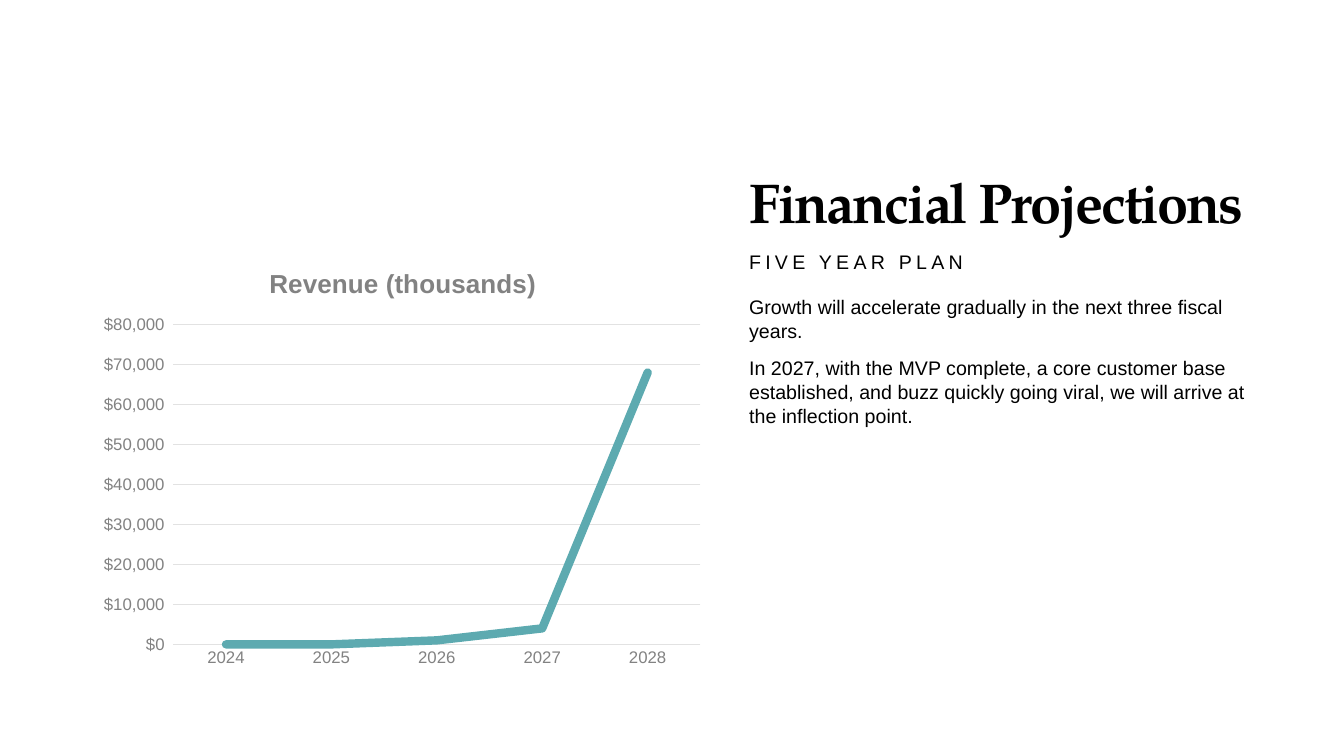
"""Build the revenue plan slide with its line chart and text."""
from dataclasses import dataclass, field
from typing import Any

from lxml.etree import SubElement
from pptx import Presentation
from pptx.chart.data import CategoryChartData
from pptx.dml.color import RGBColor
from pptx.enum.chart import XL_CHART_TYPE, XL_TICK_MARK
from pptx.enum.text import MSO_ANCHOR
from pptx.oxml import parse_xml
from pptx.oxml.ns import nsdecls, qn
from pptx.util import Inches, Pt

WIDE, HIGH = Inches(13.33), Inches(7.5)


@dataclass(frozen=True)
class Theme:
    ink: str = "000000"
    base: str = "3F3F3F"
    grey: str = "828282"
    rule: str = "E2E2E2"
    teal: str = "5DAAB0"
    serif: str = "TeX Gyre Pagella"
    sans: str = "Arial"
    head: float = 40
    body: float = 14
    title: float = 18.6
    label: float = 12
    small: float = 10


@dataclass(frozen=True)
class Area:
    """Place on the slide in percent of its width and height."""
    left: float
    top: float
    width: float
    height: float

    def frame(self) -> tuple[int, ...]:
        shares = (self.left, self.top, self.width, self.height)
        return tuple(round(share * full / 100)
                     for share, full in zip(shares, (WIDE, HIGH) * 2))


@dataclass(frozen=True)
class Note:
    area: Area
    lines: tuple[str, ...]
    font: dict[str, Any]
    track: int = 0
    frame: dict[str, Any] = field(default_factory=dict)
    format: dict[str, Any] = field(default_factory=dict)


THEME = Theme()
LEFT, RIGHT = 6.9, 55.74
SPAN = 39.08
CHART = Area(LEFT, 32.8, 46.14, 56.4)
YEARS = ("2024", "2025", "2026", "2027", "2028")
SALES = (0, 0, 1000, 4000, 68000)
NAME = "Revenue (thousands)"
MONEY = '"$"#,##0_);[Red]\\("$"#,##0\\)'
SANS = {"name": THEME.sans, "size": Pt(THEME.body)}
NOTES = (
    Note(Area(RIGHT, 12.27, SPAN, 19.6), ("Financial Projections",),
         {"name": THEME.serif, "size": Pt(THEME.head), "bold": True}, -150,
         {"vertical_anchor": MSO_ANCHOR.BOTTOM}, {"line_spacing": 0.9}),
    Note(Area(RIGHT, 38.4, SPAN, 50.8),
         ("Growth will accelerate gradually in the next three fiscal years.",
          "In 2027, with the MVP complete, a core customer base established, "
          "and buzz quickly going viral, we will arrive at the inflection "
          "point."), SANS),
    Note(Area(RIGHT, 32.8, SPAN, 4.67), ("FIVE YEAR PLAN",), SANS, 300,
         format={"line_spacing": 0.9}),
)


def apply(target: Any, values: dict[str, Any]) -> None:
    for name, value in values.items():
        setattr(target, name, value)


def style(font: Any, values: dict[str, Any], tint: str) -> None:
    apply(font, values)
    font.color.rgb = RGBColor.from_string(tint)


def stroke(line: Any, tint: str, width: float) -> None:
    line.color.rgb = RGBColor.from_string(tint)
    line.width = Pt(width)


def add_note(slide: Any, note: Note) -> None:
    frame = slide.shapes.add_textbox(*note.area.frame()).text_frame
    apply(frame, {"word_wrap": True, "margin_left": 0, **note.frame})
    for index, line in enumerate(note.lines):
        para = frame.add_paragraph() if index else frame.paragraphs[0]
        apply(para, note.format)
        if index:
            para.space_before = Pt(10)
        run = para.add_run()
        run.text = line
        style(run.font, note.font, THEME.ink)
        if note.track:
            run._r.get_or_add_rPr().set("spc", str(note.track))


def pin_plot(chart: Any, shares: dict[str, float]) -> None:
    plot = chart._chartSpace.chart.plotArea
    for old in plot.findall(qn("c:layout")):
        plot.remove(old)
    layout = parse_xml(f"<c:layout {nsdecls('c')}><c:manualLayout/></c:layout>")
    modes = {"layoutTarget": "inner", "xMode": "edge", "yMode": "edge"}
    for tag, value in {**modes, **shares}.items():
        SubElement(layout[0], qn(f"c:{tag}")).set("val", str(value))
    plot.insert(0, layout)


def add_graph(slide: Any) -> None:
    data = CategoryChartData(number_format=MONEY)
    data.categories = YEARS
    data.add_series(NAME, SALES)
    chart = slide.shapes.add_chart(
        XL_CHART_TYPE.LINE, *CHART.frame(), data).chart
    apply(chart, {"has_legend": False, "has_title": True})
    style(chart.font, {"name": THEME.sans, "size": Pt(THEME.small)}, THEME.base)
    title = chart.chart_title.text_frame
    title.text = NAME
    style(title.paragraphs[0].runs[0].font,
          {"name": THEME.sans, "size": Pt(THEME.title), "bold": True},
          THEME.grey)
    pin_plot(chart, {"x": 0.13, "y": 0.18, "w": 0.85, "h": 0.75})

    years, money = chart.category_axis, chart.value_axis
    ticks = {"major_tick_mark": XL_TICK_MARK.NONE,
             "minor_tick_mark": XL_TICK_MARK.NONE}
    for axis in (years, money):
        apply(axis, ticks)
        style(axis.tick_labels.font,
              {"name": THEME.sans, "size": Pt(THEME.label)}, THEME.grey)
    apply(money, {"minimum_scale": 0, "maximum_scale": 80000,
                  "major_unit": 10000, "has_major_gridlines": True})
    apply(money.tick_labels, {"number_format": MONEY,
                              "number_format_is_linked": False})
    money.format.line.fill.background()
    for line in (years.format.line, money.major_gridlines.format.line):
        stroke(line, THEME.rule, 0.75)

    chart.plots[0].vary_by_categories = False
    trend = chart.plots[0].series[0]
    trend.smooth = False
    stroke(trend.format.line, THEME.teal, 6)
    trend._element.xpath("c:spPr/a:ln")[0].set("cap", "rnd")


def main() -> None:
    deck = Presentation()
    apply(deck, {"slide_width": WIDE, "slide_height": HIGH})
    slide = deck.slides.add_slide(deck.slide_layouts[6])
    for note in NOTES:
        add_note(slide, note)
    add_graph(slide)
    deck.save("out.pptx")


if __name__ == "__main__":
    main()
